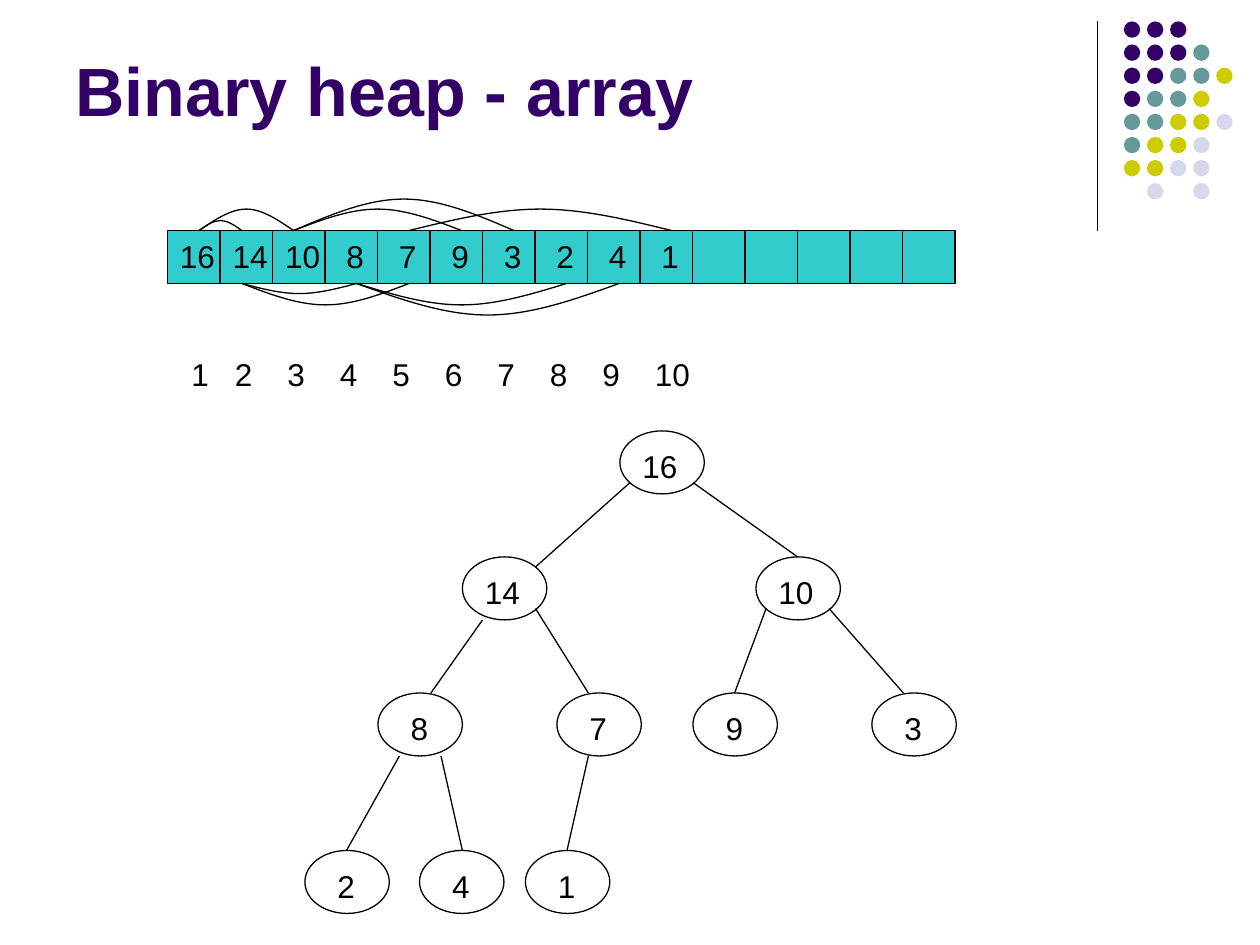
from dataclasses import dataclass

from lxml import etree
from pptx import Presentation
from pptx.dml.color import RGBColor
from pptx.enum import shapes, text
from pptx.oxml import ns
from pptx.util import Inches, Pt


@dataclass
class Theme:
    font: str = "Arial"
    ink: str = "000000"
    title: str = "330066"
    cell: str = "33CCCC"
    teal: str = "669999"
    lime: str = "CCCC00"
    pale: str = "D8D8EC"
    head: float = 39
    body: float = 18
    line: float = 0.75


theme = Theme()
deck = Presentation()
deck.slide_width, deck.slide_height = Inches(10), Inches(7.5)
slide = deck.slides.add_slide(deck.slide_layouts[6])
parts = slide.shapes


def write(words, x, y, w, h, size=theme.body, color=theme.ink):
    """Add a one-line text box and return its paragraph."""
    frame = parts.add_textbox(Inches(x), Inches(y), Inches(w), Inches(h)).text_frame
    frame.word_wrap = True
    para = frame.paragraphs[0]
    run = para.add_run()
    run.text = words
    run.font.name, run.font.size = theme.font, Pt(size)
    run.font.color.rgb = RGBColor.from_string(color)
    return para


def rule(x1, y1, x2, y2):
    """Draw a thin straight line without a shadow."""
    line = parts.add_connector(shapes.MSO_CONNECTOR.STRAIGHT,
                               Inches(x1), Inches(y1), Inches(x2), Inches(y2))
    line.line.color.rgb = RGBColor.from_string(theme.ink)
    line.line.width = Pt(theme.line)
    etree.SubElement(line._element.spPr, ns.qn("a:effectLst"))


# Corner dots
rule(8.71, 0.17, 8.71, 1.83)
tints = {"P": theme.title, "T": theme.teal, "Y": theme.lime, "L": theme.pale}
dots = ["PPP", "PPPT", "PPTTY", "PTTY", "TTYYL", "TYYL", "YYLL", " L L"]
gap = 1.1 / 6
for row, marks in enumerate(dots):
    for col, mark in enumerate(marks):
        if mark in tints:
            dot = parts.add_shape(shapes.MSO_SHAPE.OVAL, Inches(8.92 + col * gap),
                                  Inches(0.17 + row * gap), Inches(0.13), Inches(0.13))
            dot.shadow.inherit = False
            dot.fill.solid()
            dot.fill.fore_color.rgb = RGBColor.from_string(tints[mark])
            dot.line.fill.background()

# Title
title = write("Binary heap - array", 0.5, 0.13, 8.25, 0.95, theme.head, theme.title)
title.runs[0].font.bold = True
title._parent.vertical_anchor = text.MSO_ANCHOR.BOTTOM

# Array cells
heap = [16, 14, 10, 8, 7, 9, 3, 2, 4, 1]
slots, step = 15, 5 / 12
left, top, base = 1.33, 1.83, 2.25
bar = parts.add_shape(shapes.MSO_SHAPE.RECTANGLE, Inches(left), Inches(top),
                      Inches(slots * step), Inches(base - top))
bar.shadow.inherit = False
bar.fill.solid()
bar.fill.fore_color.rgb = RGBColor.from_string(theme.cell)
bar.line.color.rgb = RGBColor.from_string(theme.ink)
bar.line.width = Pt(theme.line)
for i in range(1, slots):
    rule(left + i * step, top, left + i * step, base)

# Values and indices, spaced by one tab stop per cell
rows = [(heap, left, top, "ctr", 0.14), (range(1, 11), 1.42, 2.77, "l", -0.07)]
for items, x, y, align, start in rows:
    para = write("\t".join(str(n) for n in items), x, y, 6.17, 0.4)
    tabs = etree.SubElement(para._p.get_or_add_pPr(), ns.qn("a:tabLst"))
    for i in range(1, len(heap)):
        etree.SubElement(tabs, ns.qn("a:tab"), pos=str(Inches(start + i * step)), algn=align)

# Arcs from each parent to its children: below the bar for even parents
ends = [1.58, 1.92, 2.33] + [2.83 + i * step for i in range(7)]
rises = [0.08, 0.17, 0.08, 0.17, 0.17, 0.25, 0.17, 0.25, 0.17]
for child, rise in enumerate(rises, 2):
    parent = child // 2
    x1, x2 = ends[parent - 1], ends[child - 1]
    y, way = (base, 1) if parent % 2 == 0 else (top, -1)
    pen = parts.build_freeform(Inches(x1), Inches(y))
    pen.add_line_segments([(Inches((x1 + x2) / 2), Inches(y + way * rise)),
                           (Inches(x2), Inches(y))], close=False)
    arc = pen.convert_to_shape()
    arc.shadow.inherit = False
    arc.fill.background()
    arc.line.color.rgb = RGBColor.from_string(theme.ink)
    arc.line.width = Pt(theme.line)
    # Turn the two straight halves into curves that are level at the crest
    knots = [(int(p.get("x")), int(p.get("y"))) for p in arc._element.iter(ns.qn("a:pt"))]
    halves = list(arc._element.iter(ns.qn("a:lnTo")))
    for half, (ax, ay), (bx, by), bends in zip(halves, knots, knots[1:], [(0.5, 1), (0, 0.5)]):
        half.tag = ns.qn("a:cubicBezTo")
        for i, bend in enumerate(bends):
            grip = etree.Element(ns.qn("a:pt"), x=str(round(ax + (bx - ax) * (i + 1) / 3)),
                                 y=str(round(ay + (by - ay) * bend)))
            half.insert(i, grip)

# Tree nodes, in heap order
spots = [(4.92, 3.42), (3.67, 4.42), (6, 4.42), (3, 5.5), (4.42, 5.5),
         (5.5, 5.5), (6.92, 5.5), (2.42, 6.75), (3.33, 6.75), (4.17, 6.75)]
for value, (x, y) in zip(heap, spots):
    node = parts.add_shape(shapes.MSO_SHAPE.OVAL, Inches(x), Inches(y),
                           Inches(0.67), Inches(0.5))
    node.shadow.inherit = False
    node.fill.background()
    node.line.color.rgb = RGBColor.from_string(theme.ink)
    node.line.width = Pt(theme.line)
    write(str(value), x + (0.08 if value > 9 else 0.16), y + 0.08, 0.58, 0.4)

# Tree edges
edges = [(5, 3.83, 4.25, 4.5), (5.5, 3.83, 6.33, 4.42), (3.83, 4.92, 3.42, 5.5),
         (4.25, 4.83, 4.67, 5.5), (6.08, 4.83, 5.83, 5.5), (6.58, 4.83, 7.17, 5.5),
         (3.17, 6, 2.75, 6.75), (3.5, 6, 3.67, 6.75), (4.67, 6, 4.5, 6.75)]
for edge in edges:
    rule(*edge)

deck.save("out.pptx")
